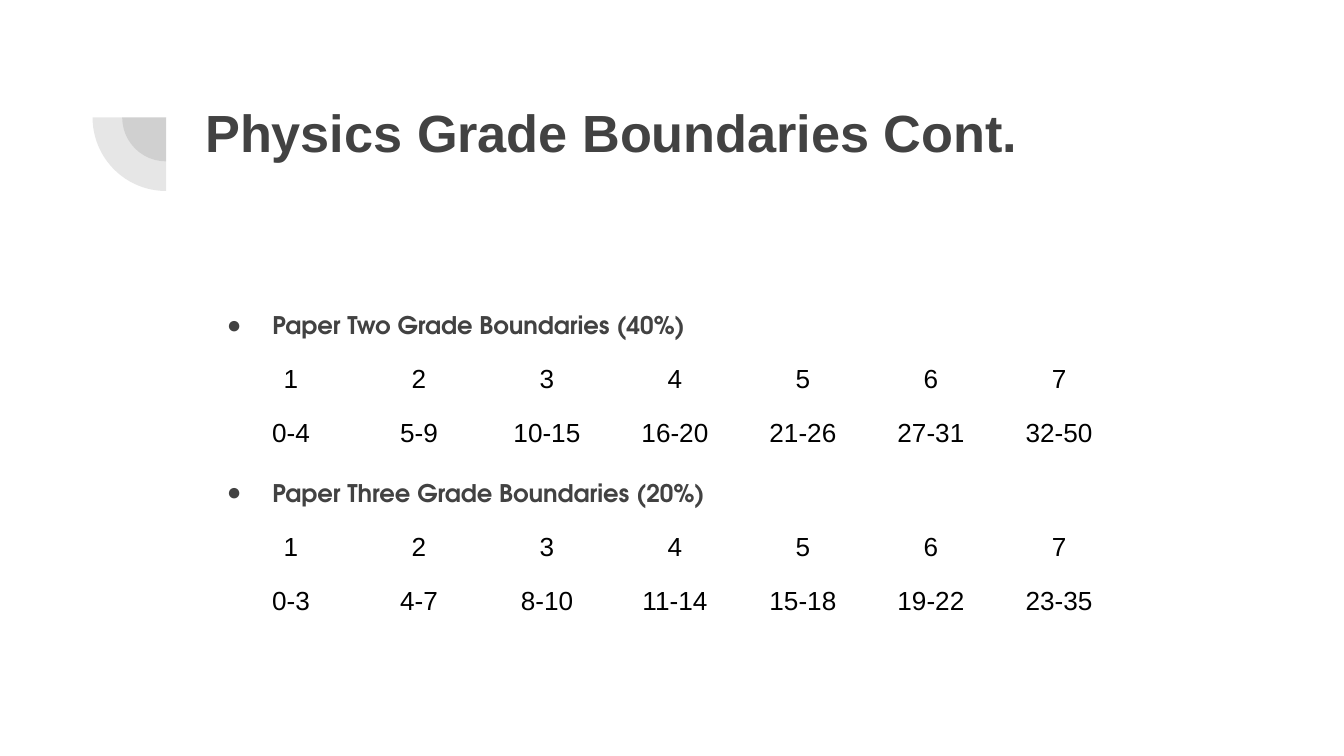
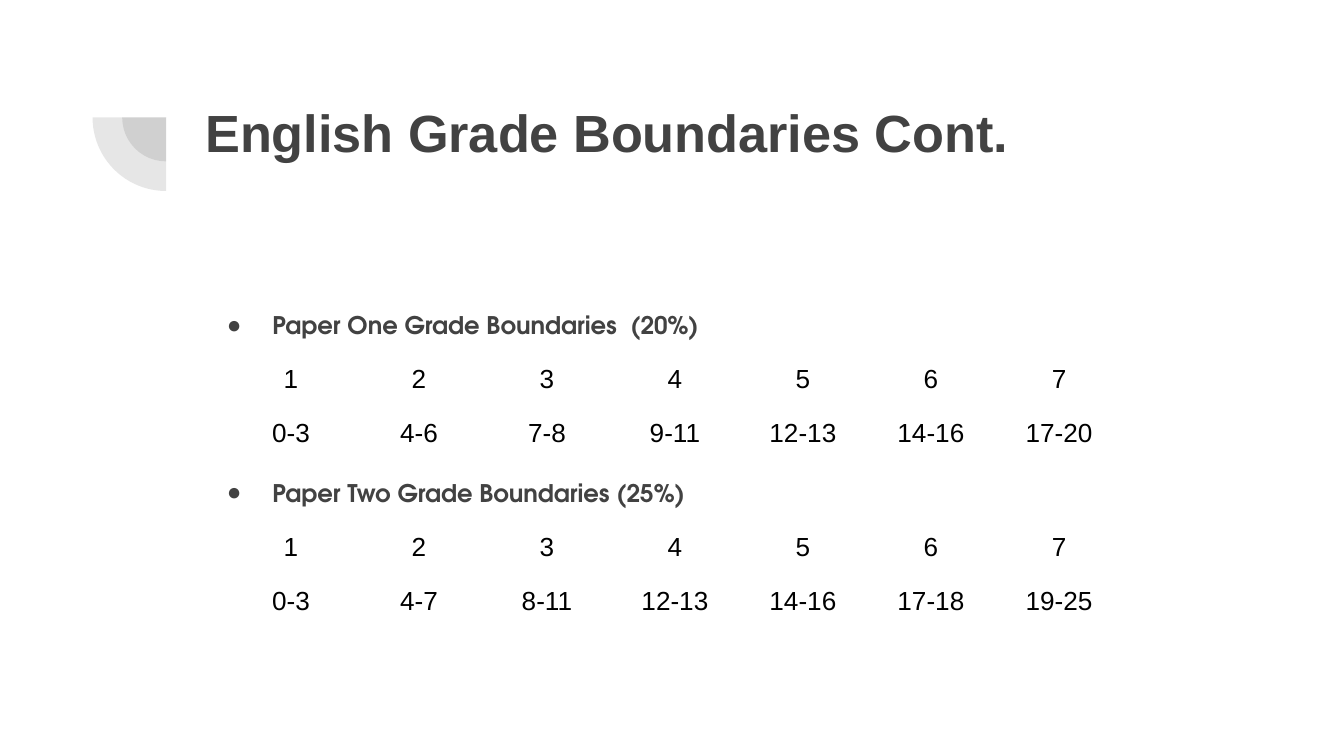
import pptx
import pptx.dml.color
import pptx.enum.shapes
import pptx.enum.text
import pptx.oxml
import pptx.oxml.ns
import pptx.util

Cm = pptx.util.Cm
Pt = pptx.util.Pt

# Shared style
DARK = "424242"
BLACK = "000000"
TITLE_FORMAT = {"name": "Arial", "size": Pt(28), "bold": True}
HEADING_FORMAT = {"name": "TeX Gyre Adventor", "size": Pt(13), "bold": True}
CELL_FORMAT = {"name": "Arial", "size": Pt(14), "bold": False}
TEXT_LEFT, TEXT_WIDTH = 3.63, 19.53

# Slide title, then (heading, mark ranges for grades 1 to 7) for each paper
SLIDES = [
    ("Physics Grade Boundaries Cont.", [
        ("Paper Two Grade Boundaries (40%)",
         ["0-4", "5-9", "10-15", "16-20", "21-26", "27-31", "32-50"]),
        ("Paper Three Grade Boundaries (20%)",
         ["0-3", "4-7", "8-10", "11-14", "15-18", "19-22", "23-35"]),
    ]),
    ("English Grade Boundaries Cont.", [
        ("Paper One Grade Boundaries  (20%)",
         ["0-3", "4-6", "7-8", "9-11", "12-13", "14-16", "17-20"]),
        ("Paper Two Grade Boundaries (25%)",
         ["0-3", "4-7", "8-11", "12-13", "14-16", "17-18", "19-25"]),
    ]),
]
GRADES = [str(grade) for grade in range(1, 8)]


def color(value):
    return pptx.dml.color.RGBColor.from_string(value)


def element(xml):
    namespace = pptx.oxml.ns.nsdecls("a")
    return pptx.oxml.parse_xml(xml.replace("/>", f" {namespace}/>"))


class Deck:
    """Holds the presentation, its style and the current slide."""

    def __init__(self):
        self.presentation = pptx.Presentation()
        self.presentation.slide_width = Cm(25.4)
        self.presentation.slide_height = Cm(14.29)
        self.slide = None

    def add_slide(self, title):
        layout = self.presentation.slide_layouts[6]
        self.slide = self.presentation.slides.add_slide(layout)
        for diameter in (1.66, 2.78):
            self.quarter_circle(3.14, 2.22, diameter)
        frame = self.text_box(1.65, 2.78)
        self.styled_run(frame.paragraphs[0], title, TITLE_FORMAT, DARK)

    def styled_run(self, paragraph, text, format_values, text_color):
        run = paragraph.add_run()
        run.text = text
        for name, value in format_values.items():
            setattr(run.font, name, value)
        run.font.color.rgb = color(text_color)

    def quarter_circle(self, center_x, center_y, diameter):
        shape = self.slide.shapes.add_shape(
            pptx.enum.shapes.MSO_SHAPE.PIE,
            Cm(center_x - diameter / 2), Cm(center_y - diameter / 2),
            Cm(diameter), Cm(diameter))
        shape.adjustments[0], shape.adjustments[1] = 108, 162
        shape.rotation = 270
        shape.shadow.inherit = False
        shape.line.fill.background()
        shape.fill.solid()
        shape.fill.fore_color.rgb = color(DARK)
        fill_color = shape.element.find(".//" + pptx.oxml.ns.qn("a:srgbClr"))
        fill_color.append(element('<a:alpha val="13000"/>'))

    def text_box(self, top, height):
        box = self.slide.shapes.add_textbox(
            Cm(TEXT_LEFT), Cm(top), Cm(TEXT_WIDTH), Cm(height))
        frame = box.text_frame
        frame.word_wrap = True
        for side in ("left", "top", "right", "bottom"):
            setattr(frame, f"margin_{side}", Cm(0.25))
        return frame

    def bullet_list(self, headings, top, height, gap):
        frame = self.text_box(top, height)
        for index, heading in enumerate(headings):
            paragraph = frame.add_paragraph() if index else frame.paragraphs[0]
            paragraph.line_spacing = 1.15
            paragraph.space_before = Pt(gap if index else 0)
            properties = paragraph._p.get_or_add_pPr()
            properties.set("marL", str(Cm(1.27)))
            properties.set("indent", str(Cm(-0.86)))
            properties.append(element('<a:buFont typeface="Arial"/>'))
            properties.append(element('<a:buChar char="●"/>'))
            self.styled_run(paragraph, heading, HEADING_FORMAT, DARK)

    def table(self, rows, left, top, column_width, row_height):
        columns = len(rows[0])
        table = self.slide.shapes.add_table(
            len(rows), columns, Cm(left), Cm(top),
            Cm(column_width * columns), Cm(row_height * len(rows))).table
        table.first_row = table.horz_banding = False
        for row_index, values in enumerate(rows):
            for column_index, value in enumerate(values):
                cell = table.cell(row_index, column_index)
                cell.fill.background()
                paragraph = cell.text_frame.paragraphs[0]
                paragraph.alignment = pptx.enum.text.PP_ALIGN.CENTER
                self.styled_run(paragraph, value, CELL_FORMAT, BLACK)


def main():
    deck = Deck()
    for title, papers in SLIDES:
        deck.add_slide(title)
        # Headings leave room for the table that follows each one
        deck.bullet_list([heading for heading, _ in papers], 5.54, 7.06, 71.6)
        for index, (_, marks) in enumerate(papers):
            deck.table([GRADES, marks], 4.29, 6.76 + 3.18 * index, 2.42, 1.03)
    deck.presentation.save("out.pptx")


if __name__ == "__main__":
    main()
